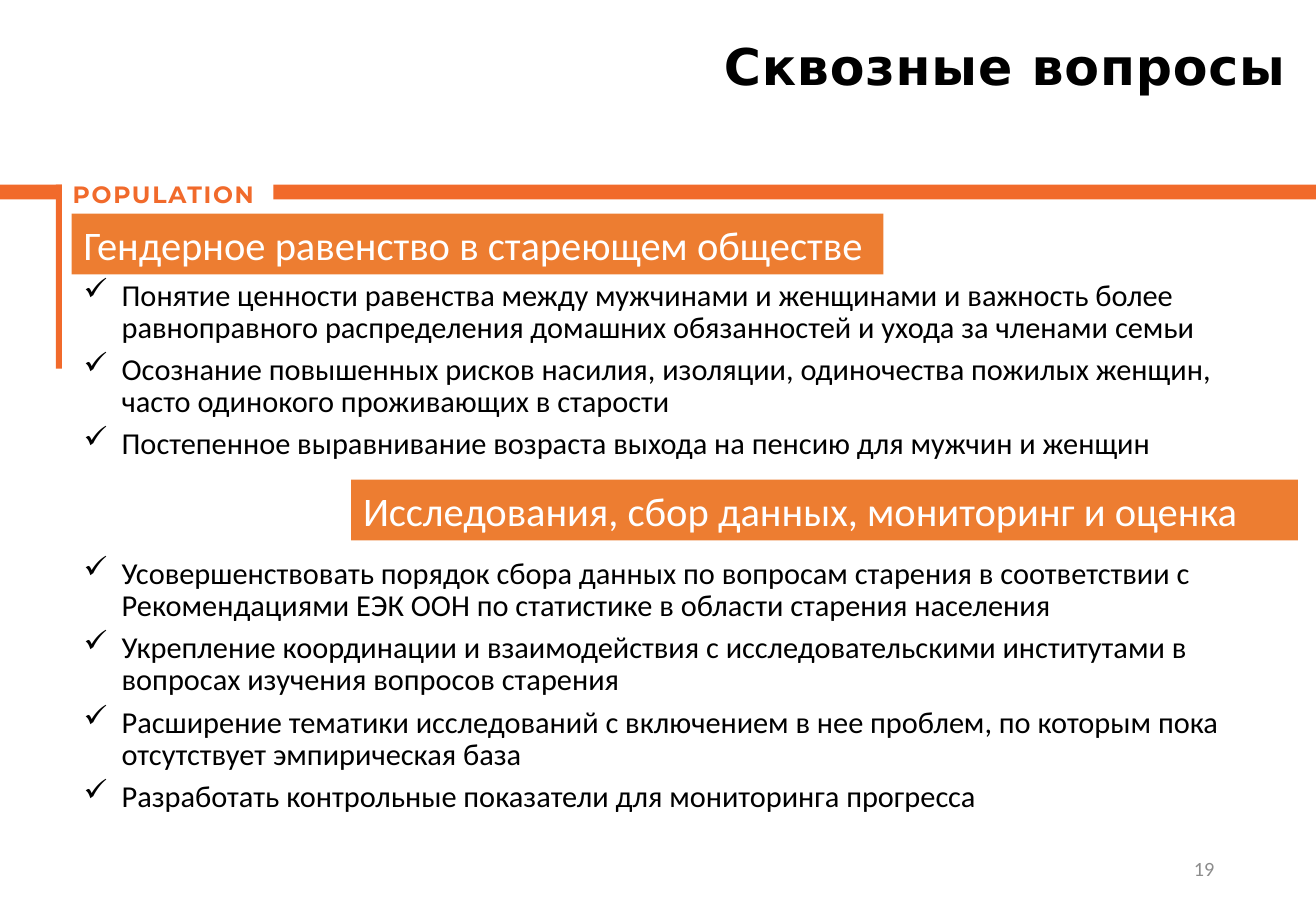
from pptx import Presentation
from pptx.dml.color import RGBColor
from pptx.enum.shapes import MSO_SHAPE
from pptx.enum.text import MSO_ANCHOR, PP_ALIGN
from pptx.oxml.ns import qn
from pptx.util import Pt
from lxml import etree

RECTANGLE = MSO_SHAPE.RECTANGLE
TOP, MIDDLE = MSO_ANCHOR.TOP, MSO_ANCHOR.MIDDLE
LEFT, RIGHT = PP_ALIGN.LEFT, PP_ALIGN.RIGHT

WIDTH, HEIGHT = 779.76, 540
COLORS = {"rule": "F16A2B", "banner": "ED7D31", "black": "000000",
          "white": "FFFFFF", "grey": "8C8C8C"}

GENDER_POINTS = [
    "Понятие ценности равенства между мужчинами и женщинами и важность более "
    "равноправного распределения домашних обязанностей и ухода за членами семьи",
    "Осознание повышенных рисков насилия, изоляции, одиночества пожилых женщин, "
    "часто одинокого проживающих в старости",
    "Постепенное выравнивание возраста выхода на пенсию для мужчин и женщин",
]
RESEARCH_POINTS = [
    "Усовершенствовать порядок сбора данных по вопросам старения в соответствии с "
    "Рекомендациями ЕЭК ООН по статистике в области старения населения",
    "Укрепление координации и взаимодействия с исследовательскими институтами в "
    "вопросах изучения вопросов старения",
    "Расширение тематики исследований с включением в нее проблем, по которым пока "
    "отсутствует эмпирическая база",
    "Разработать контрольные показатели для мониторинга прогресса",
]


class SlideBuilder:
    def __init__(self, page, font="Calibri"):
        self.page = page
        self.font = font

    def bar(self, left, top, width, height, color):
        shape = self.page.shapes.add_shape(
            RECTANGLE, Pt(left), Pt(top), Pt(width), Pt(height))
        shape.shadow.inherit = False
        shape.fill.solid()
        shape.fill.fore_color.rgb = RGBColor.from_string(COLORS[color])
        shape.line.fill.background()
        return shape

    def add_span(self, para, text, size, color, font=None, bold=False, spacing=0):
        span = para.add_run()
        span.text = text
        style = {"name": font or self.font, "size": Pt(size), "bold": bold}
        for name, value in style.items():
            setattr(span.font, name, value)
        span.font.color.rgb = RGBColor.from_string(COLORS[color])
        if spacing:
            span._r.get_or_add_rPr().set("spc", str(int(spacing * 100)))

    def frame(self, left, top, width, height, anchor=TOP):
        box = self.page.shapes.add_textbox(Pt(left), Pt(top), Pt(width), Pt(height))
        box.text_frame.word_wrap = True
        box.text_frame.vertical_anchor = anchor
        return box.text_frame

    def label(self, left, top, width, height, text, size, color,
              align=LEFT, anchor=TOP, **style):
        para = self.frame(left, top, width, height, anchor).paragraphs[0]
        para.alignment = align
        self.add_span(para, text, size, color, **style)

    def banner(self, left, top, width, text):
        frame = self.bar(left, top, width, 36, "banner").text_frame
        frame.word_wrap = True
        frame.vertical_anchor = TOP
        para = frame.paragraphs[0]
        para.alignment = LEFT
        self.add_span(para, text, 24, "white")

    def checklist(self, left, top, width, height, points):
        frame = self.frame(left, top, width, height)
        for index, text in enumerate(points):
            para = frame.add_paragraph() if index else frame.paragraphs[0]
            layout = {"line_spacing": Pt(19), "space_after": Pt(6)}
            for name, value in layout.items():
                setattr(para, name, value)
            properties = para._p.get_or_add_pPr()
            properties.set("marL", str(Pt(22.5)))
            properties.set("indent", str(-Pt(22.5)))
            etree.SubElement(properties, qn("a:buChar")).set("char", "✓")
            self.add_span(para, text, 18, "black")


def main():
    deck = Presentation()
    deck.slide_width, deck.slide_height = Pt(WIDTH), Pt(HEIGHT)
    page = deck.slides.add_slide(deck.slide_layouts[6])
    builder = SlideBuilder(page)

    # Orange rule with its section name
    rule_top = 109.5
    builder.bar(162, rule_top, WIDTH - 162, 8.8, "rule")
    builder.label(36, 103, 141, 29.5, "POPULATION", 14, "rule",
                  font="Montserrat", bold=True, spacing=1)
    builder.bar(0, rule_top, 36.7, 8.8, "rule")
    builder.bar(33.1, rule_top, 3.6, 109, "rule")

    # Page number and title
    builder.label(551, 500.4, 175.6, 28.8, "19", 12, "grey", RIGHT, MIDDLE)
    builder.label(11, 17, 758, 78, "Cквозные вопросы", 30, "black", RIGHT,
                  font="DejaVu Sans", bold=True, spacing=0.5)

    # Gender equality
    builder.banner(42.5, 126.7, 481, "Гендерное равенство в стареющем обществе")
    builder.checklist(42.5, 162.7, 713.5, 115, GENDER_POINTS)

    # Research and monitoring
    builder.banner(208, 284.4, 561, "Исследования, сбор данных, мониторинг и оценка")
    builder.checklist(42.5, 327.6, 726.5, 188, RESEARCH_POINTS)

    deck.save("out.pptx")


if __name__ == "__main__":
    main()
